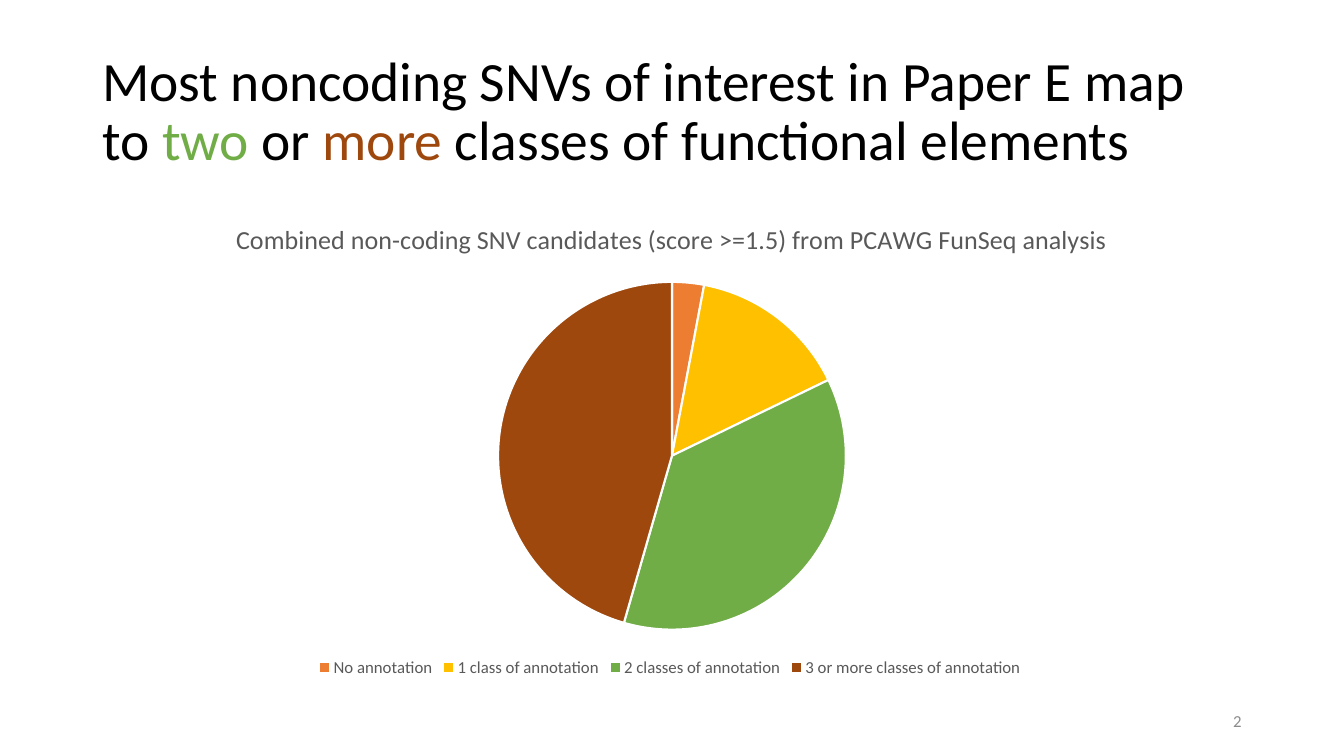
from dataclasses import dataclass

from lxml.etree import SubElement
from pptx import Presentation
from pptx.chart.data import CategoryChartData
from pptx.dml.color import RGBColor
from pptx.enum.chart import XL_CHART_TYPE as ChartType, XL_LEGEND_POSITION as LegendPosition
from pptx.enum.text import MSO_ANCHOR as Anchor, PP_ALIGN as Align
from pptx.oxml.ns import qn
from pptx.util import Cm, Pt


@dataclass(frozen=True)
class Theme:
    font: str = "Calibri"
    black: str = "000000"
    grey: str = "595959"
    pale_grey: str = "8C8C8C"
    white: str = "FFFFFF"
    orange: str = "ED7D31"
    yellow: str = "FFC000"
    green: str = "70AD47"
    brown: str = "9E480E"
    heading_size: float = 39.6
    chart_title_size: float = 18.6
    small_size: float = 12


THEME = Theme()
MARGIN = 2.33
CONTENT_WIDTH = 29.21
CHART_TITLE = "Combined non-coding SNV candidates (score >=1.5) from PCAWG FunSeq analysis"
HEADING = [
    ("Most noncoding SNVs of interest in Paper E map to ", THEME.black),
    ("two", THEME.green),
    (" or ", THEME.black),
    ("more", THEME.brown),
    (" classes of functional elements", THEME.black),
]
CLASSES = [
    ("No annotation", 3, THEME.orange),
    ("1 class of annotation", 15, THEME.yellow),
    ("2 classes of annotation", 37, THEME.green),
    ("3 or more classes of annotation ", 46, THEME.brown),
]
# Pie area as fractions of the chart box
PIE_AREA = {"x": 0.35, "y": 0.16, "w": 0.3, "h": 0.74}


def style_font(font, size, color):
    font.name = THEME.font
    font.size = Pt(size)
    font.bold = False
    font.color.rgb = RGBColor.from_string(color)


def add_text(page, box, spans, size, align=Align.LEFT, line_spacing=1.0):
    frame = page.shapes.add_textbox(*map(Cm, box)).text_frame
    frame.word_wrap = True
    frame.vertical_anchor = Anchor.MIDDLE
    para = frame.paragraphs[0]
    para.alignment = align
    para.line_spacing = line_spacing
    for words, color in spans:
        span = para.add_run()
        span.text = words
        style_font(span.font, size, color)


def place_pie(chart):
    plot_area = chart.plots[0]._element.getparent()
    for old in plot_area.findall(qn("c:layout")):
        plot_area.remove(old)
    layout = SubElement(plot_area, qn("c:layout"))
    plot_area.insert(0, layout)
    manual = SubElement(layout, qn("c:manualLayout"))
    settings = {"layoutTarget": "inner", "xMode": "edge", "yMode": "edge", **PIE_AREA}
    for name, value in settings.items():
        SubElement(manual, qn(f"c:{name}")).set("val", str(value))


def add_annotation_pie(page, box):
    # Data
    data = CategoryChartData()
    data.categories = [label for label, _, _ in CLASSES]
    data.add_series(CHART_TITLE, [share for _, share, _ in CLASSES])
    chart = page.shapes.add_chart(ChartType.PIE, *map(Cm, box), data).chart
    style_font(chart.font, THEME.small_size, THEME.grey)
    place_pie(chart)

    # Title
    chart.has_title = True
    chart.chart_title.include_in_layout = False
    span = chart.chart_title.text_frame.paragraphs[0].add_run()
    span.text = CHART_TITLE
    style_font(span.font, THEME.chart_title_size, THEME.grey)

    # Legend
    chart.has_legend = True
    chart.legend.position = LegendPosition.BOTTOM
    chart.legend.include_in_layout = False
    style_font(chart.legend.font, THEME.small_size, THEME.grey)

    # Slices
    plot = chart.plots[0]
    plot.vary_by_categories = True
    for index, (_, _, color) in enumerate(CLASSES):
        slice_format = plot.series[0].points[index].format
        slice_format.fill.solid()
        slice_format.fill.fore_color.rgb = RGBColor.from_string(color)
        slice_format.line.color.rgb = RGBColor.from_string(THEME.white)
        slice_format.line.width = Pt(1.5)


def main():
    deck = Presentation()
    deck.slide_width, deck.slide_height = Cm(33.87), Cm(19.05)
    page = deck.slides.add_slide(deck.slide_layouts[6])

    add_text(page, (MARGIN, 1.01, CONTENT_WIDTH, 3.68), HEADING,
             THEME.heading_size, line_spacing=0.9)
    add_annotation_pie(page, (MARGIN, 5.08, CONTENT_WIDTH, 12.09))
    # Page number
    add_text(page, (23.92, 17.66, 7.62, 1.01), [("2", THEME.pale_grey)],
             THEME.small_size, align=Align.RIGHT)

    deck.save("out.pptx")


if __name__ == "__main__":
    main()
